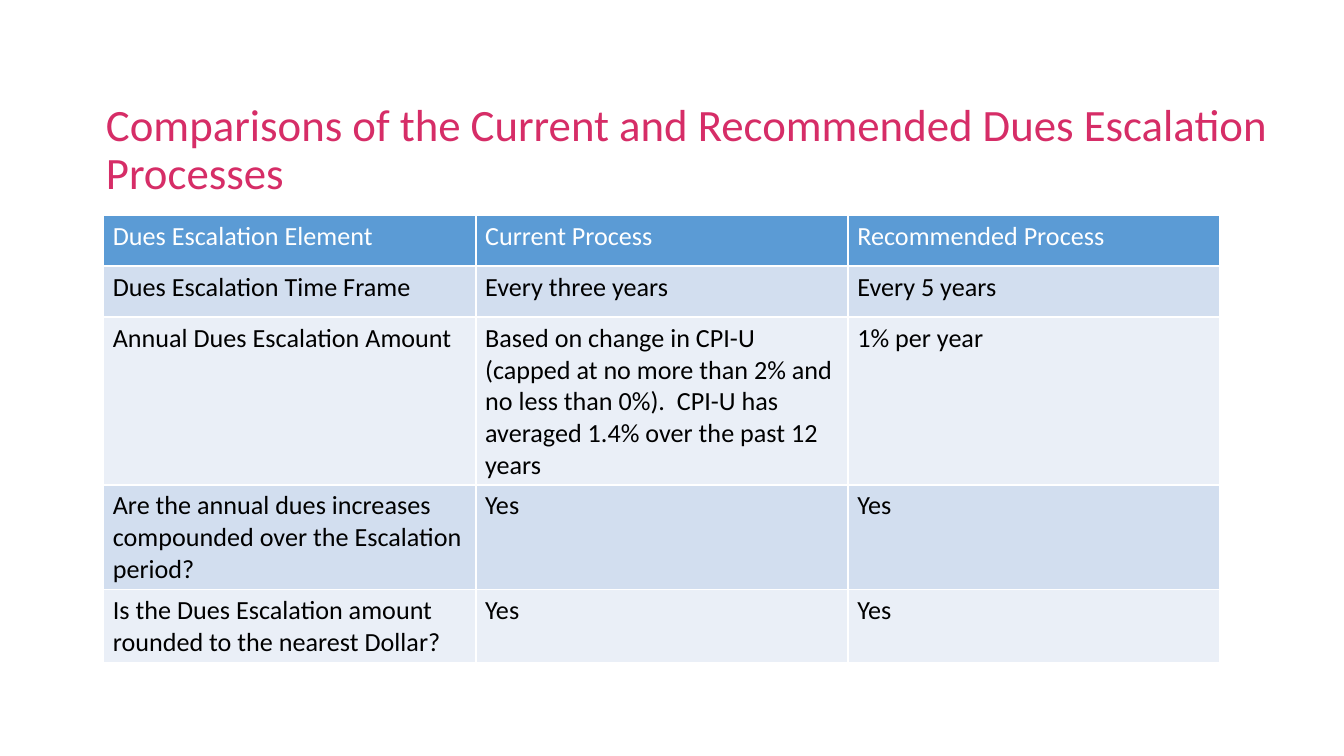
import pptx
import pptx.util
import pptx.dml.color
import pptx.enum.text
import pptx.oxml.ns
import lxml.etree

Inches, Pt = pptx.util.Inches, pptx.util.Pt
RGB = pptx.dml.color.RGBColor

TITLE = "Comparisons of the Current and Recommended Dues Escalation Processes"
ROWS = [
    ("Dues Escalation Element", "Current Process", "Recommended Process"),
    ("Dues Escalation Time Frame", "Every three years", "Every 5 years"),
    ("Annual Dues Escalation Amount",
     "Based on change in CPI-U (capped at no more than 2% and no less than 0%).  "
     "CPI-U has averaged 1.4% over the past 12 years",
     "1% per year"),
    ("Are the annual dues increases compounded over the Escalation period?", "Yes", "Yes"),
    ("Is the Dues Escalation amount rounded to the nearest Dollar?", "Yes", "Yes"),
]
HEIGHTS = [0.38, 0.38, 0.97, 0.75, 0.54]
COL = 2.77
WIDE = Inches(10)

FONT = "Calibri"
PINK = RGB(0xD6, 0x2D, 0x67)
BLUE = RGB(0x5B, 0x9B, 0xD5)
BANDS = [RGB(0xEA, 0xEF, 0xF7), RGB(0xD2, 0xDE, 0xEF)]
WHITE = RGB(0xFF, 0xFF, 0xFF)
BLACK = RGB(0, 0, 0)


def style(para, size, color):
    para.font.name = FONT
    para.font.size = Pt(size)
    para.font.color.rgb = color


def border(cell):
    """Draw thin white lines on all four cell edges."""
    props = cell._tc.get_or_add_tcPr()
    tag = pptx.oxml.ns.qn
    for side in "LRTB":
        line = lxml.etree.SubElement(props, tag("a:ln" + side), w=str(Pt(1)))
        fill = lxml.etree.SubElement(line, tag("a:solidFill"))
        lxml.etree.SubElement(fill, tag("a:srgbClr"), val=str(WHITE))


def add_title(slide):
    box = slide.shapes.add_textbox(Inches(0.69), Inches(0.58), Inches(8.85), Inches(1.09))
    frame = box.text_frame
    frame.word_wrap = True
    frame.vertical_anchor = pptx.enum.text.MSO_ANCHOR.MIDDLE
    para = frame.paragraphs[0]
    para.text = TITLE
    para.line_spacing = 0.9
    style(para, 24, PINK)


def add_grid(slide):
    count = len(ROWS[0])
    table = slide.shapes.add_table(
        len(ROWS), count, Inches(0.77), Inches(1.6),
        Inches(COL * count), Inches(sum(HEIGHTS))).table
    for col in table.columns:
        col.width = Inches(COL)
    for r, (texts, height) in enumerate(zip(ROWS, HEIGHTS)):
        table.rows[r].height = Inches(height)
        head = r == 0
        for c, text in enumerate(texts):
            cell = table.cell(r, c)
            cell.margin_left = cell.margin_right = Inches(0.07)
            cell.margin_top = cell.margin_bottom = Inches(0.04)
            border(cell)
            cell.fill.solid()
            cell.fill.fore_color.rgb = BLUE if head else BANDS[r % 2]
            para = cell.text_frame.paragraphs[0]
            para.text = text
            style(para, 14, WHITE if head else BLACK)
            para.font.bold = False


deck = pptx.Presentation()
deck.slide_width, deck.slide_height = WIDE, WIDE * 9 // 16
page = deck.slides.add_slide(deck.slide_layouts[6])
add_title(page)
add_grid(page)
deck.save("out.pptx")
